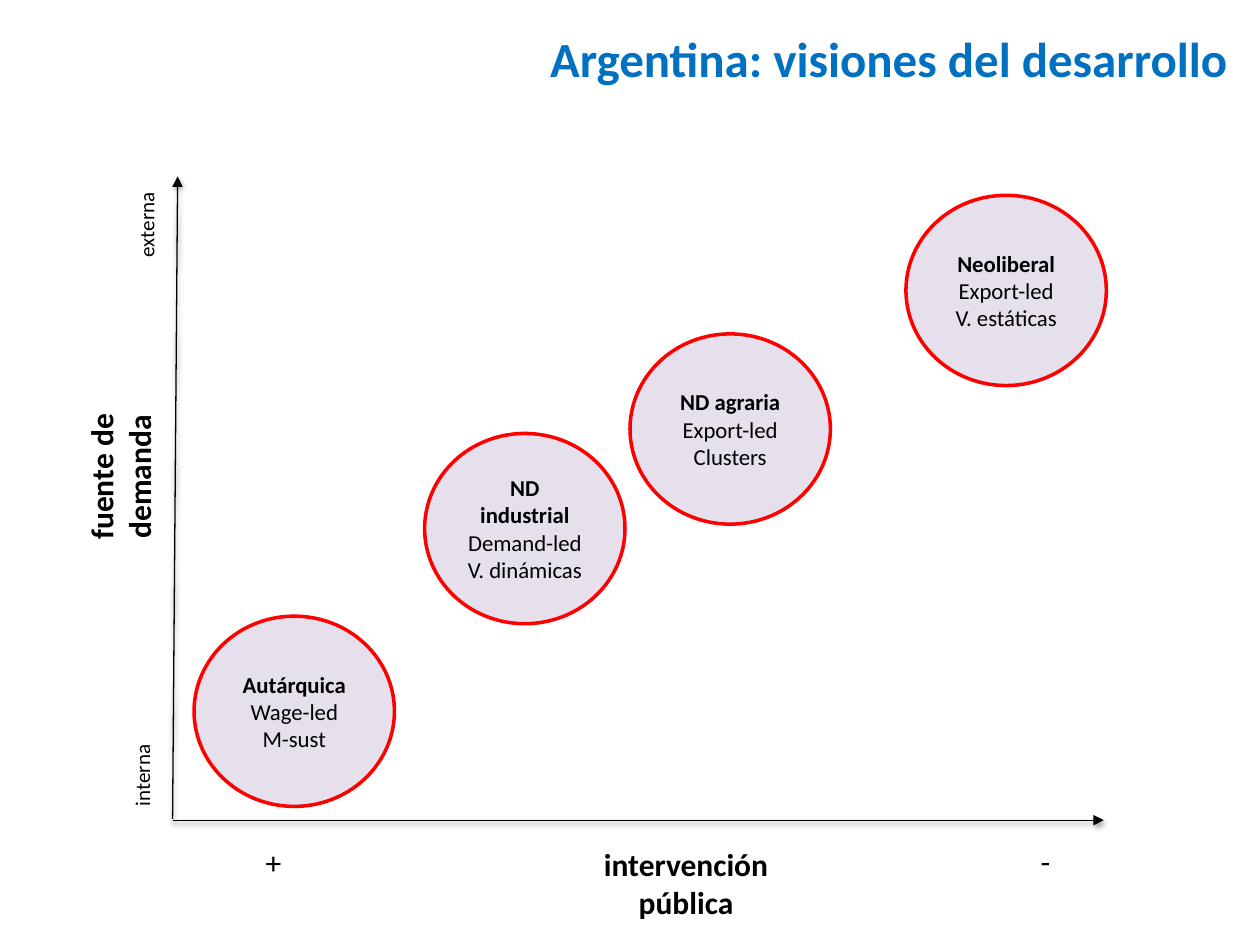
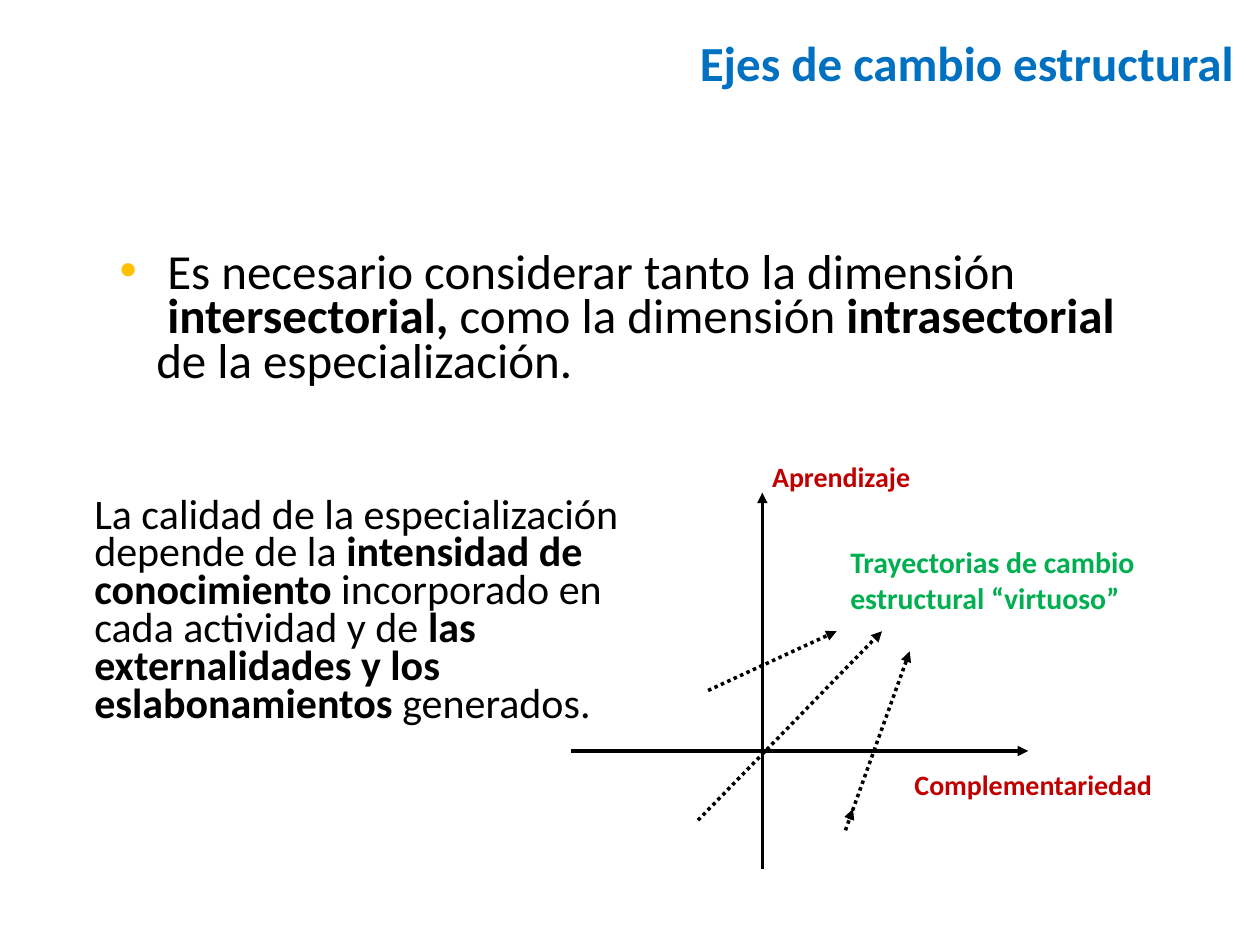
"""Build two slides on visions of development and axes of structural change."""
from dataclasses import dataclass
from typing import Optional

from lxml.etree import SubElement
from pptx import Presentation
from pptx.dml.color import RGBColor
from pptx.enum.dml import MSO_LINE
from pptx.enum.shapes import MSO_CONNECTOR, MSO_SHAPE
from pptx.enum.text import MSO_ANCHOR, MSO_AUTO_SIZE, PP_ALIGN
from pptx.oxml.ns import qn
from pptx.util import Inches, Pt

FONT = "Calibri"
COLORS = {
    "title": "0070C0",
    "text": "000000",
    "bubble": "E6E0EC",
    "ring": "FF0000",
    "axis_name": "C00000",
    "paths": "00B050",
    "bullet": "FFC000",
}
BUBBLE_WIDTH, BUBBLE_HEIGHT = 1.59, 1.51


@dataclass
class Bubble:
    left: float
    top: float
    lines: list[str]


@dataclass
class Label:
    box: tuple[float, float, float, float]
    text: str
    size: int
    color: str = "text"
    align: PP_ALIGN = PP_ALIGN.LEFT
    rotation: int = 0
    wrap: bool = False
    spacing: Optional[float] = None


@dataclass
class Arrow:
    start: tuple[float, float]
    end: tuple[float, float]
    width: float = 2
    dotted: bool = False
    shadow: bool = False


BUBBLES = [
    Bubble(1.54, 4.89, ["*Autárquica*", "Wage-led", "M-sust"]),
    Bubble(3.37, 3.44, ["*ND industrial*", "Demand-led", "V. dinámicas"]),
    Bubble(5, 2.65, ["*ND agraria*", "Export-led", "Clusters"]),
    Bubble(7.19, 1.55, ["*Neoliberal*", "Export-led", "V. estáticas"]),
]
VISION_AXES = [
    Arrow((1.37, 6.5), (1.41, 1.4), 0.75, shadow=True),
    Arrow((1.37, 6.51), (8.76, 6.51), 0.75, shadow=True),
]
VISION_LABELS = [
    Label((4.69, 6.66, 1.51, 0.71), "*intervención\vpública*", 18, align=PP_ALIGN.CENTER),
    Label((2.01, 6.64, 0.33, 0.4), "+", 18),
    Label((8.16, 6.63, 0.28, 0.4), "-", 18),
    Label((0.8, 1.63, 0.72, 0.3), "externa", 12, rotation=270),
    Label((0.78, 6, 0.69, 0.3), "interna", 12, rotation=270),
    Label((0.35, 3.43, 1.21, 0.71), "*fuente de\vdemanda*", 18,
          align=PP_ALIGN.CENTER, rotation=270),
]
CHANGE_ARROWS = [
    Arrow((4.53, 5.96), (8.16, 5.96)),
    Arrow((6.05, 6.9), (6.05, 3.91)),
    Arrow((5.54, 6.51), (7, 5.01), dotted=True),
    Arrow((5.62, 5.48), (6.64, 5.01), dotted=True),
    Arrow((6.74, 6.5), (6.77, 6.42)),
    Arrow((6.71, 6.59), (7.22, 5.17), dotted=True),
]
QUALITY = "\n".join([
    "La calidad de la especialización",
    "depende de la *intensidad de*",
    "*conocimiento* incorporado en",
    "cada actividad y de *las*",
    "*externalidades y los*",
    "*eslabonamientos* generados. ",
])
CHANGE_LABELS = [
    Label((6.03, 3.6, 1.46, 0.37), "*Aprendizaje*", 16, "axis_name", wrap=True),
    Label((7.16, 6.04, 2.17, 0.37), "*Complementariedad*", 16, "axis_name", wrap=True),
    Label((0.65, 3.91, 4.4, 1.92), QUALITY, 24, align=PP_ALIGN.JUSTIFY, spacing=0.75),
    Label((6.65, 4.27, 2.47, 0.67), "*Trayectorias de cambio\vestructural “virtuoso”*",
          17, "paths"),
]
DIMENSIONS = (" Es necesario considerar tanto la dimensión\v *intersectorial, *"
              "como la dimensión *intrasectorial* de la especialización.")


def rgb(name: str) -> RGBColor:
    """Return the named colour."""
    return RGBColor.from_string(COLORS[name])


def place(shape, box: tuple[float, float, float, float]) -> None:
    """Move and size a shape in inches."""
    shape.left, shape.top, shape.width, shape.height = map(Inches, box)


def write(text_frame, text: str, size: int, color: str = "text",
          align: PP_ALIGN = PP_ALIGN.LEFT, spacing=None) -> None:
    """Write paragraphs in which asterisks switch bold on and off."""
    for number, line in enumerate(text.split("\n")):
        paragraph = text_frame.add_paragraph() if number else text_frame.paragraphs[0]
        paragraph.alignment = align
        paragraph.space_before = Pt(0)
        if spacing is not None:
            paragraph.line_spacing = spacing
        for index, part in enumerate(line.split("*")):
            for row, piece in enumerate(part.split("\v")):
                if row:
                    paragraph.add_line_break()
                if piece:
                    run = paragraph.add_run()
                    run.text = piece
                    run.font.name = FONT
                    run.font.size = Pt(size)
                    run.font.bold = index % 2 == 1
                    run.font.color.rgb = rgb(color)


def set_title(slide, text: str, box: tuple[float, float, float, float]) -> None:
    """Place and format the slide title."""
    title = slide.shapes.title
    place(title, box)
    title.text_frame.auto_size = MSO_AUTO_SIZE.NONE
    title.text_frame.vertical_anchor = MSO_ANCHOR.MIDDLE
    write(title.text_frame, f"*{text}*", 28, "title", PP_ALIGN.RIGHT, Pt(24))


def set_bullet(body, text: str, box: tuple[float, float, float, float]) -> None:
    """Fill the body placeholder with one bulleted paragraph."""
    place(body, box)
    body.text_frame.auto_size = MSO_AUTO_SIZE.NONE
    write(body.text_frame, text, 28, spacing=0.75)
    properties = body.text_frame.paragraphs[0]._p.get_or_add_pPr()
    properties.set("marL", str(Inches(0.29)))
    properties.set("indent", str(Inches(-0.29)))
    bullet_color = SubElement(properties, qn("a:buClr"))
    SubElement(bullet_color, qn("a:srgbClr"), val=COLORS["bullet"])
    SubElement(properties, qn("a:buChar"), char="•")


def add_label(slide, label: Label) -> None:
    """Add a text box."""
    shape = slide.shapes.add_textbox(*map(Inches, label.box))
    shape.rotation = label.rotation
    shape.text_frame.word_wrap = label.wrap
    shape.text_frame.auto_size = MSO_AUTO_SIZE.SHAPE_TO_FIT_TEXT
    write(shape.text_frame, label.text, label.size, label.color, label.align, label.spacing)


def add_arrow(slide, arrow: Arrow) -> None:
    """Add a black line with an arrowhead at its end."""
    connector = slide.shapes.add_connector(
        MSO_CONNECTOR.STRAIGHT, *map(Inches, arrow.start + arrow.end))
    connector.line.color.rgb = rgb("text")
    connector.line.width = Pt(arrow.width)
    if arrow.dotted:
        connector.line.dash_style = MSO_LINE.ROUND_DOT
    properties = connector._element.spPr
    SubElement(properties.find(qn("a:ln")), qn("a:tailEnd"), type="triangle")
    effects = SubElement(properties, qn("a:effectLst"))
    if arrow.shadow:
        shadow = SubElement(effects, qn("a:outerShdw"), blurRad="40000", dist="20000",
                            dir="5400000", rotWithShape="0")
        color = SubElement(shadow, qn("a:srgbClr"), val=COLORS["text"])
        SubElement(color, qn("a:alpha"), val="38000")


def add_bubble(slide, bubble: Bubble) -> None:
    """Add an ellipse describing one vision."""
    shape = slide.shapes.add_shape(
        MSO_SHAPE.OVAL,
        *map(Inches, (bubble.left, bubble.top, BUBBLE_WIDTH, BUBBLE_HEIGHT)))
    shape.shadow.inherit = False
    shape.fill.solid()
    shape.fill.fore_color.rgb = rgb("bubble")
    shape.line.color.rgb = rgb("ring")
    shape.line.width = Pt(2)
    shape.text_frame.vertical_anchor = MSO_ANCHOR.MIDDLE
    write(shape.text_frame, "\n".join(bubble.lines), 13, align=PP_ALIGN.CENTER)


def build_visions(presentation) -> None:
    """Build the map of development visions."""
    slide = presentation.slides.add_slide(presentation.slide_layouts[5])
    set_title(slide, "Argentina: visiones del desarrollo", (2.31, 0.13, 7.53, 0.79))
    for axis in VISION_AXES:
        add_arrow(slide, axis)
    for bubble in BUBBLES:
        add_bubble(slide, bubble)
    for label in VISION_LABELS:
        add_label(slide, label)


def build_change(presentation) -> None:
    """Build the axes of structural change."""
    slide = presentation.slides.add_slide(presentation.slide_layouts[1])
    set_title(slide, "Ejes de cambio estructural", (4.53, 0.21, 5.36, 0.7))
    set_bullet(slide.placeholders[1], DIMENSIONS, (0.85, 1.97, 8.25, 1.18))
    for arrow in CHANGE_ARROWS:
        add_arrow(slide, arrow)
    for label in CHANGE_LABELS:
        add_label(slide, label)


def main() -> None:
    """Create and save the presentation."""
    presentation = Presentation()
    presentation.slide_width = Inches(10)
    presentation.slide_height = Inches(7.5)
    build_visions(presentation)
    build_change(presentation)
    presentation.save("out.pptx")


if __name__ == "__main__":
    main()
